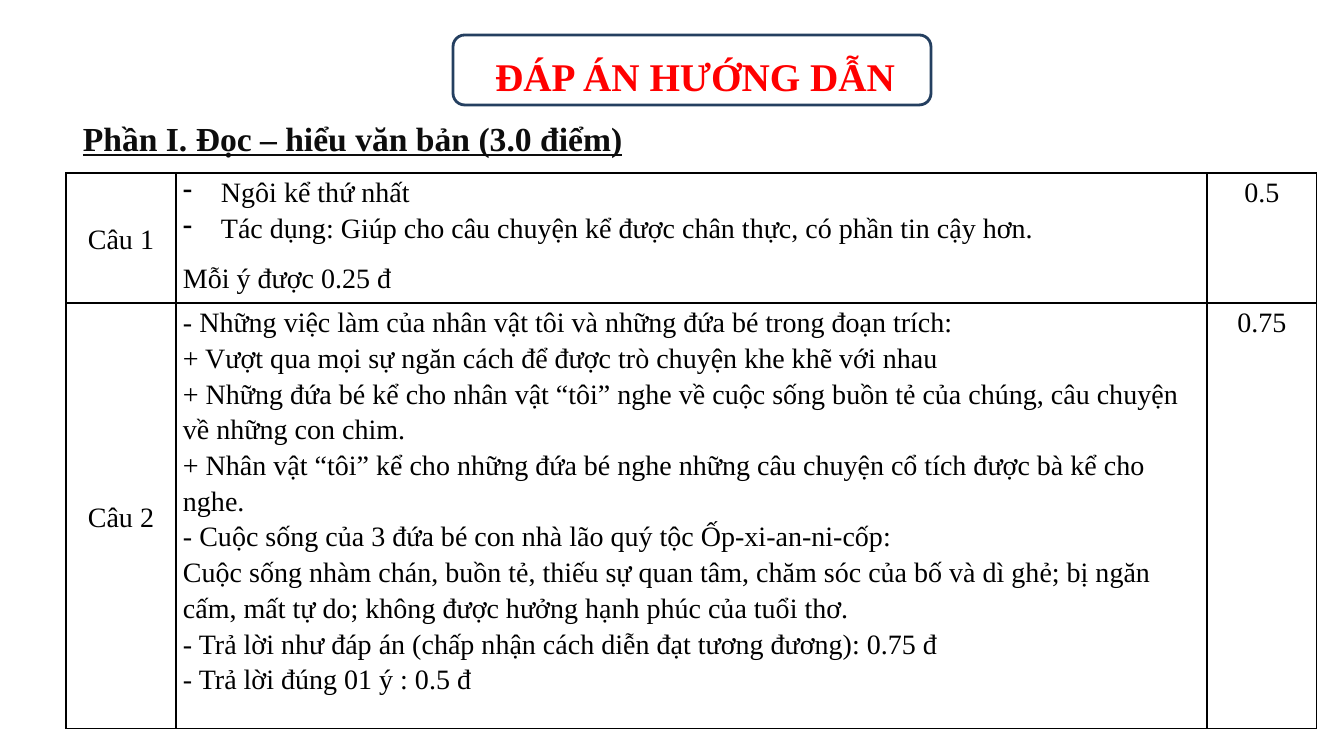
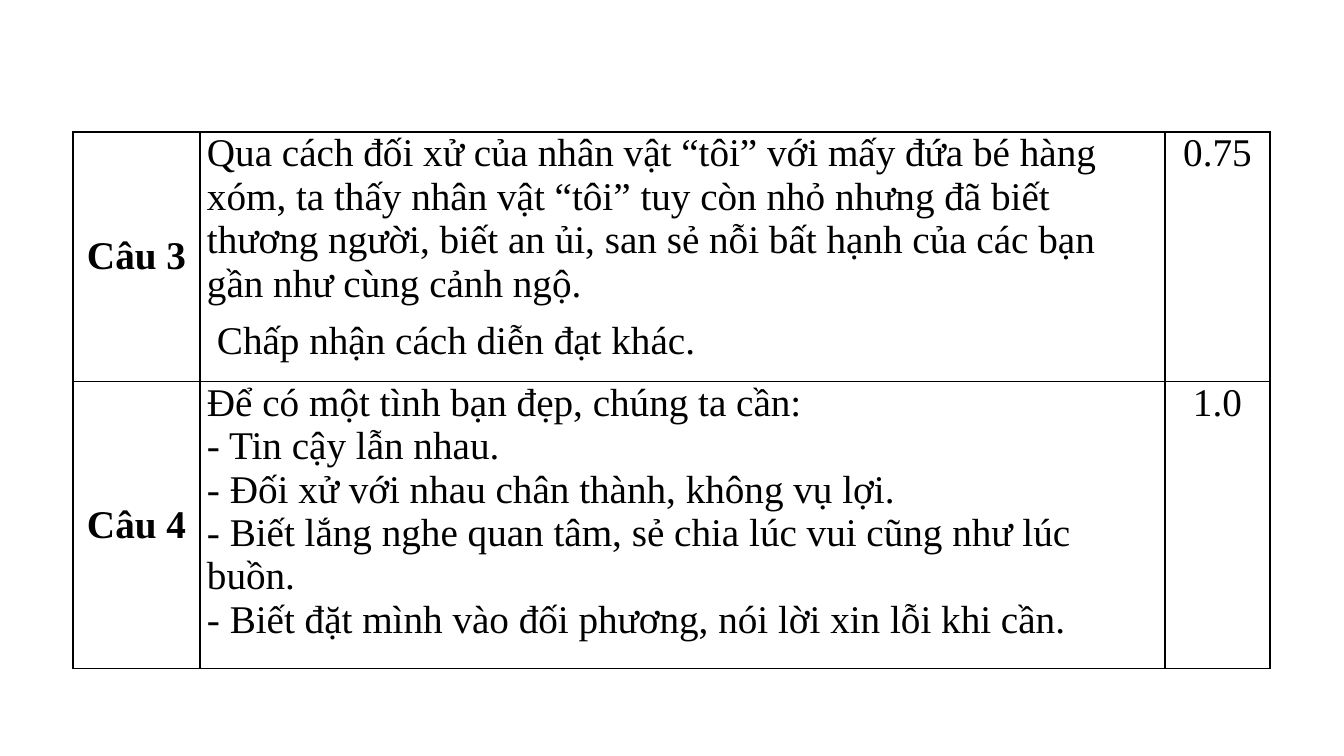
from dataclasses import dataclass

from lxml import etree
from pptx import Presentation
from pptx.dml.color import RGBColor
from pptx.enum.shapes import MSO_SHAPE
from pptx.enum.text import MSO_ANCHOR, PP_ALIGN
from pptx.oxml.ns import qn
from pptx.util import Emu, Pt

ROUND_RECT = MSO_SHAPE.ROUNDED_RECTANGLE
TOP, MIDDLE = MSO_ANCHOR.TOP, MSO_ANCHOR.MIDDLE
LEFT, CENTER = PP_ALIGN.LEFT, PP_ALIGN.CENTER
EMU_PER_PX = 914400 / 100.8


@dataclass(frozen=True)
class Theme:
    font: str = "Times New Roman"
    text: str = "000000"
    title: str = "FF0000"
    heading: str = "0D0D0D"
    frame: str = "243F60"
    title_size: int = 28
    heading_size: int = 24
    body_size: int = 20
    large_size: int = 28
    frame_width: int = 2
    border_width: int = 1
    loose: float = 1.15
    gap: int = 10
    cell_inset: int = 7


THEME = Theme()
GAP = {"after": THEME.gap}
DASH = {"bullet": "-", "hang": 38}


def px(n):
    return Emu(round(n * EMU_PER_PX))


def add_text(tf, text, size=THEME.body_size, color=THEME.text, bold=False,
             underline=False, align=LEFT, spacing=1.0, after=0, bullet=None,
             hang=0, indent=0):
    """Add one paragraph, filling the frame's first one if it is still empty."""
    p = tf.paragraphs[0]
    if p.runs:
        p = tf.add_paragraph()
    p.alignment, p.line_spacing, p.space_after = align, spacing, Pt(after)
    pPr = p._p.get_or_add_pPr()
    if bullet:
        pPr.set("marL", str(px(hang)))
        pPr.set("indent", str(-px(hang)))
        etree.SubElement(pPr, qn("a:buChar")).set("char", bullet)
    elif indent:
        pPr.set("indent", str(px(indent)))
    r = p.add_run()
    r.text = text
    font = r.font
    font.name, font.size = THEME.font, Pt(size)
    font.bold, font.underline = bold, underline
    font.color.rgb = RGBColor.from_string(color)


def add_text_box(s, box, text, **fmt):
    tf = s.shapes.add_textbox(*map(px, box)).text_frame
    tf.word_wrap = True
    add_text(tf, text, **fmt)


def add_title(s, box):
    x, y, w, h = box
    sp = s.shapes.add_shape(ROUND_RECT, *map(px, box))
    sp.shadow.inherit = False
    sp.fill.background()
    sp.line.color.rgb = RGBColor.from_string(THEME.frame)
    sp.line.width = Pt(THEME.frame_width)
    add_text_box(s, (x - 95, y + 5, w + 196, h - 10), "ĐÁP ÁN HƯỚNG DẪN",
                 size=THEME.title_size, color=THEME.title, bold=True,
                 align=CENTER, spacing=THEME.loose)


def set_borders(cell):
    tcPr = cell._tc.get_or_add_tcPr()
    for side in ("a:lnL", "a:lnR", "a:lnT", "a:lnB"):
        ln = etree.SubElement(tcPr, qn(side), w=str(Pt(THEME.border_width)))
        fill = etree.SubElement(ln, qn("a:solidFill"))
        etree.SubElement(fill, qn("a:srgbClr"), val=THEME.text)


def fill_cell(cell, paragraphs, anchor=TOP, **fmt):
    """Each paragraph is a (text, own format) pair; fmt holds for all of them."""
    set_borders(cell)
    cell.fill.background()
    cell.vertical_anchor = anchor
    cell.margin_left = cell.margin_right = px(THEME.cell_inset)
    cell.margin_top = cell.margin_bottom = 0
    for text, own in paragraphs:
        add_text(cell.text_frame, text, **{**fmt, **own})


def add_answers(s, origin, widths, heights, answers, bold_label=False, **fmt):
    """Table of question label, answer paragraphs and points."""
    box = (*origin, sum(widths), sum(heights))
    table = s.shapes.add_table(len(heights), len(widths), *map(px, box)).table
    table.first_row = table.horz_banding = False
    for column, width in zip(table.columns, widths):
        column.width = px(width)
    centred = {**fmt, **GAP, "align": CENTER}
    for row, height, (label, paragraphs, points) in zip(table.rows, heights, answers):
        row.height = px(height)
        label_cell, answer_cell, points_cell = row.cells
        fill_cell(label_cell, [(label, {})], MIDDLE, bold=bold_label, **centred)
        fill_cell(answer_cell, paragraphs, **fmt)
        fill_cell(points_cell, [(points, {})], **centred)


def plain(*texts):
    return [(text, {}) for text in texts]


FIRST_ANSWERS = [
    ("Câu 1", [
        ("Ngôi kể thứ nhất", DASH),
        ("Tác dụng: Giúp cho câu chuyện kể được chân thực, có phần tin cậy hơn.",
         {**DASH, **GAP}),
        ("Mỗi ý được 0.25 đ", GAP),
    ], "0.5"),
    ("Câu 2", plain(
        "- Những việc làm của nhân vật tôi và những đứa bé trong đoạn trích:",
        "+ Vượt qua mọi sự ngăn cách để được trò chuyện khe khẽ với nhau",
        "+ Những đứa bé kể cho nhân vật “tôi” nghe về cuộc sống buồn tẻ của chúng, "
        "câu chuyện về những con chim.",
        "+ Nhân vật “tôi” kể cho những đứa bé nghe những câu chuyện cổ tích được "
        "bà kể cho nghe.",
        "- Cuộc sống của 3 đứa bé con nhà lão quý tộc Ốp-xi-an-ni-cốp:",
        "Cuộc sống nhàm chán, buồn tẻ, thiếu sự quan tâm, chăm sóc của bố và dì ghẻ; "
        "bị ngăn cấm, mất tự do; không được hưởng hạnh phúc của tuổi thơ.",
        "- Trả lời như đáp án (chấp nhận cách diễn đạt tương đương): 0.75 đ",
        "- Trả lời đúng 01 ý : 0.5 đ",
    ), "0.75"),
]

SECOND_ANSWERS = [
    ("Câu 3", [
        ("Qua cách đối xử của nhân vật “tôi” với mấy đứa bé hàng xóm, ta thấy nhân "
         "vật “tôi” tuy còn nhỏ nhưng đã biết thương người, biết an ủi, san sẻ nỗi "
         "bất hạnh của các bạn gần như cùng cảnh ngộ.", GAP),
        ("Chấp nhận cách diễn đạt khác.", {**GAP, "indent": 10}),
    ], "0.75"),
    ("Câu 4", plain(
        "Để có một tình bạn đẹp, chúng ta cần:",
        "- Tin cậy lẫn nhau.",
        "- Đối xử với nhau chân thành, không vụ lợi.",
        "- Biết lắng nghe quan tâm, sẻ chia lúc vui cũng như lúc buồn.",
        "- Biết đặt mình vào đối phương, nói lời xin lỗi khi cần.",
    ), "1.0"),
]


def main():
    prs = Presentation()
    prs.slide_width, prs.slide_height = px(1344), px(756)
    blank = prs.slide_layouts[6]

    s = prs.slides.add_slide(blank)
    add_title(s, (453, 35, 478, 70))
    add_text_box(s, (73, 113, 671, 51), "Phần I. Đọc – hiểu văn bản (3.0 điểm)",
                 size=THEME.heading_size, color=THEME.heading, bold=True,
                 underline=True)
    add_answers(s, (66, 173), (110, 1031, 110), (130, 425), FIRST_ANSWERS,
                spacing=THEME.loose)

    s = prs.slides.add_slide(blank)
    add_answers(s, (73, 132), (127, 965, 105), (231, 287), SECOND_ANSWERS,
                bold_label=True, size=THEME.large_size)

    prs.save("out.pptx")


if __name__ == "__main__":
    main()
